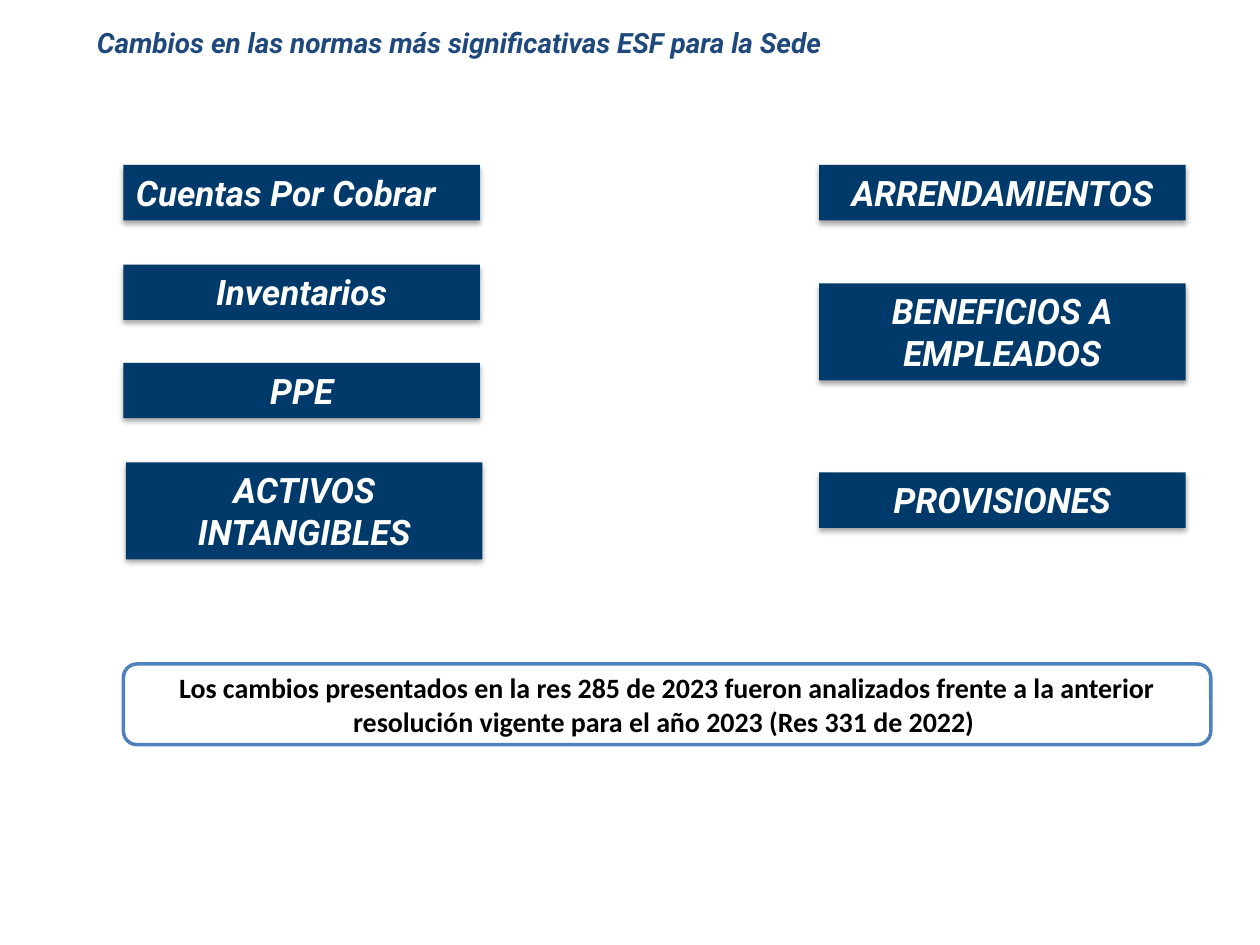
from dataclasses import dataclass

from lxml import etree
from pptx import Presentation
from pptx.dml.color import RGBColor
from pptx.enum.shapes import MSO_SHAPE
from pptx.enum.text import MSO_ANCHOR, PP_ALIGN
from pptx.oxml.ns import qn
from pptx.util import Inches, Pt

RECTANGLE = MSO_SHAPE.RECTANGLE
ROUNDED = MSO_SHAPE.ROUNDED_RECTANGLE
TOP, MIDDLE = MSO_ANCHOR.TOP, MSO_ANCHOR.MIDDLE
CENTER, JUSTIFY = PP_ALIGN.CENTER, PP_ALIGN.JUSTIFY


@dataclass(frozen=True)
class Theme:
    navy: RGBColor = RGBColor(0x00, 0x3A, 0x6A)
    title: RGBColor = RGBColor(0x1F, 0x49, 0x7D)
    outline: RGBColor = RGBColor(0x4F, 0x81, 0xBD)
    white: RGBColor = RGBColor(0xFF, 0xFF, 0xFF)
    black: RGBColor = RGBColor(0x00, 0x00, 0x00)
    heading_font: str = "Roboto"
    body_font: str = "Calibri"
    label_size: int = 20
    text_size: int = 16


theme = Theme()


def write_text(shape, text, font_name, size, color, alignment, anchor, italic):
    frame = shape.text_frame
    frame.word_wrap = True
    frame.vertical_anchor = anchor
    paragraph = frame.paragraphs[0]
    paragraph.alignment = alignment
    run = paragraph.add_run()
    run.text = text
    run.font.name = font_name
    run.font.size = Pt(size)
    run.font.bold = True
    run.font.italic = italic
    run.font.color.rgb = color


def add_soft_shadow(shape):
    shape.shadow.inherit = False
    effects = shape.fill._xPr.find(qn("a:effectLst"))
    shadow = etree.SubElement(effects, qn("a:outerShdw"), blurRad="40000",
                              dist="23000", dir="5400000", rotWithShape="0")
    color = etree.SubElement(shadow, qn("a:srgbClr"), val="000000")
    etree.SubElement(color, qn("a:alpha"), val="35000")


presentation = Presentation()
presentation.slide_width = Inches(10)
presentation.slide_height = Inches(7.5)
slide = presentation.slides.add_slide(presentation.slide_layouts[6])

title = slide.shapes.add_textbox(Inches(0.67), Inches(0.15), Inches(6.12), Inches(0.64))
write_text(title, "Cambios en las normas más significativas ESF para la Sede",
           theme.heading_font, theme.text_size, theme.title, JUSTIFY, TOP, True)

one_line, two_lines = 0.44, 0.77
left_width, right_width = 2.83, 2.91
labels = [
    ("Cuentas Por Cobrar", 0.98, 1.31, left_width, one_line, JUSTIFY),
    ("Inventarios", 0.98, 2.1, left_width, one_line, CENTER),
    ("PPE", 0.98, 2.88, left_width, one_line, CENTER),
    ("ACTIVOS INTANGIBLES", 1, 3.67, left_width, two_lines, CENTER),
    ("ARRENDAMIENTOS", 6.5, 1.31, right_width, one_line, CENTER),
    ("BENEFICIOS A EMPLEADOS", 6.5, 2.25, right_width, two_lines, CENTER),
    ("PROVISIONES", 6.5, 3.75, right_width, one_line, CENTER),
]
for text, left, top, width, height, alignment in labels:
    label = slide.shapes.add_shape(RECTANGLE, Inches(left), Inches(top),
                                   Inches(width), Inches(height))
    label.fill.solid()
    label.fill.fore_color.rgb = theme.navy
    label.line.fill.background()
    add_soft_shadow(label)
    write_text(label, text, theme.heading_font, theme.label_size, theme.white,
               alignment, TOP, True)

note = slide.shapes.add_shape(ROUNDED, Inches(0.98), Inches(5.27), Inches(8.63), Inches(0.64))
note.shadow.inherit = False
note.fill.solid()
note.fill.fore_color.rgb = theme.white
note.line.color.rgb = theme.outline
note.line.width = Pt(2)
write_text(note, "Los cambios presentados en la res 285 de 2023 fueron analizados frente a la "
           "anterior resolución vigente para el año 2023 (Res 331 de 2022) ",
           theme.body_font, theme.text_size, theme.black, CENTER, MIDDLE, False)

presentation.save("out.pptx")
